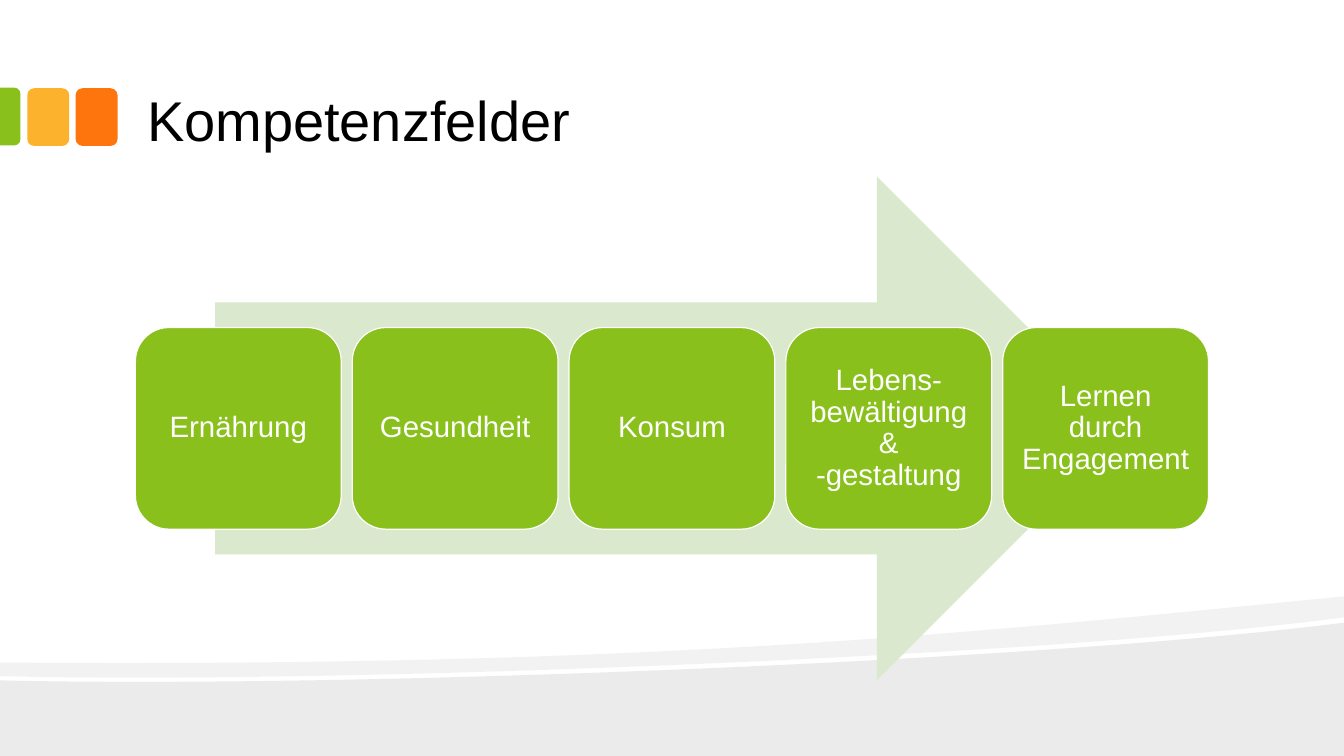
from dataclasses import dataclass

from lxml.etree import SubElement
from pptx import Presentation
from pptx.dml.color import RGBColor
from pptx.enum.shapes import MSO_SHAPE
from pptx.enum.text import MSO_ANCHOR, PP_ALIGN
from pptx.oxml.ns import qn
from pptx.shapes.autoshape import Shape
from pptx.slide import Slide
from pptx.text.text import TextFrame
from pptx.util import Pt

PX = 9525  # EMU per px, 96 px to the inch
FONT = "Arial"
COLORS = {
    "green": "89C01C",
    "yellow": "FCB22C",
    "orange": "FE750E",
    "pale_green": "DAE8CD",
    "white": "FFFFFF",
    "black": "000000",
}
FIELDS = [
    "Ernährung",
    "Gesundheit",
    "Konsum",
    "Lebens-bewältigung & -gestaltung",
    "Lernen durch Engagement",
]
CARD_LEFT, CARD_RIGHT, CARD_TOP = 129, 1151, 312
CARD_WIDTH, CARD_HEIGHT = 196, 192

Point = tuple[int, int]


@dataclass
class Box:
    left: float
    top: float
    width: float
    height: float

    def emu(self) -> list[int]:
        return [round(v * PX) for v in (self.left, self.top, self.width, self.height)]


@dataclass
class Block:
    kind: MSO_SHAPE
    box: Box
    color: str
    rotation: int = 0


@dataclass
class Wave:
    """A closed outline: one point is a line, three points are a Bézier curve."""
    start: Point
    segments: list[list[Point]]
    opacity: int


WAVES = [
    Wave((1280, 593), [
        [(1280, 720)],
        [(0, 720)],
        [(0, 648)],
        [(338, 656), (1000, 629), (1280, 593)],
    ], 8),
    Wave((1280, 568), [
        [(1280, 588)],
        [(1205, 598), (1102, 607), (988, 615)],
        [(670, 636), (248, 650), (0, 644)],
        [(0, 631)],
        [(626, 636), (932, 602), (1280, 568)],
    ], 5),
]
BLOCKS = [
    Block(MSO_SHAPE.ROUNDED_RECTANGLE, Box(72, 84, 40, 55), "orange"),
    Block(MSO_SHAPE.ROUNDED_RECTANGLE, Box(26, 84, 40, 55), "yellow"),
    Block(MSO_SHAPE.ROUND_2_SAME_RECTANGLE, Box(-18, 101, 55, 20), "green", 90),
    Block(MSO_SHAPE.RIGHT_ARROW, Box(205, 168, 870, 480), "pale_green"),
]


def rgb(name: str) -> RGBColor:
    return RGBColor.from_string(COLORS[name])


def paint(s: Shape, color: str) -> None:
    """Give a shape a flat fill without shadow or outline."""
    s.shadow.inherit = False
    s.fill.solid()
    s.fill.fore_color.rgb = rgb(color)
    s.line.fill.background()


def add_wave(slide: Slide, wave: Wave) -> None:
    builder = slide.shapes.build_freeform(*wave.start, scale=PX)
    builder.add_line_segments([pt for seg in wave.segments for pt in seg], close=True)
    s = builder.convert_to_shape()
    paint(s, "black")
    fill_color = next(s._element.iter(qn("a:srgbClr")))
    SubElement(fill_color, qn("a:alpha")).set("val", str(wave.opacity * 1000))

    lines = iter(list(s._element.iter(qn("a:lnTo"))))
    for seg in wave.segments:
        first, *others = [next(lines) for _ in seg]
        if others:
            first.tag = qn("a:cubicBezTo")
            for line in others:
                first.append(line[0])
                line.getparent().remove(line)


def add_block(slide: Slide, block: Block) -> Shape:
    s = slide.shapes.add_shape(block.kind, *block.box.emu())
    s.rotation = block.rotation
    paint(s, block.color)
    if block.kind == MSO_SHAPE.ROUND_2_SAME_RECTANGLE:
        s.adjustments[0] = 0.29
    return s


def write(tf: TextFrame, text: str, size: int, color: str, inset_x: int, inset_y: int) -> None:
    tf.word_wrap = True
    tf.margin_left = tf.margin_right = inset_x * PX
    tf.margin_top = tf.margin_bottom = inset_y * PX
    tf.text = text
    for r in tf.paragraphs[0].runs:
        r.font.name = FONT
        r.font.size = Pt(size)
        r.font.color.rgb = rgb(color)


def add_title(slide: Slide, text: str) -> None:
    tf = slide.shapes.add_textbox(*Box(128, 80, 1023, 72).emu()).text_frame
    write(tf, text, 40, "black", 12, 7)
    tf.vertical_anchor = MSO_ANCHOR.BOTTOM


def add_card(slide: Slide, box: Box, text: str) -> None:
    s = add_block(slide, Block(MSO_SHAPE.ROUNDED_RECTANGLE, box, "green"))
    s.line.color.rgb = rgb("white")
    s.line.width = Pt(0.85)
    tf = s.text_frame
    write(tf, text, 21, "white", 8, 8)
    tf.vertical_anchor = MSO_ANCHOR.MIDDLE
    p = tf.paragraphs[0]
    p.alignment = PP_ALIGN.CENTER
    p.line_spacing = 0.9


def main() -> None:
    prs = Presentation()
    prs.slide_width, prs.slide_height = 1280 * PX, 720 * PX
    slide = prs.slides.add_slide(prs.slide_layouts[6])

    for wave in WAVES:
        add_wave(slide, wave)
    for block in BLOCKS:
        add_block(slide, block)
    add_title(slide, "Kompetenzfelder")

    pitch = (CARD_RIGHT - CARD_LEFT - CARD_WIDTH) / (len(FIELDS) - 1)
    for i, field in enumerate(FIELDS):
        add_card(slide, Box(CARD_LEFT + i * pitch, CARD_TOP, CARD_WIDTH, CARD_HEIGHT), field)

    prs.save("out.pptx")


if __name__ == "__main__":
    main()
